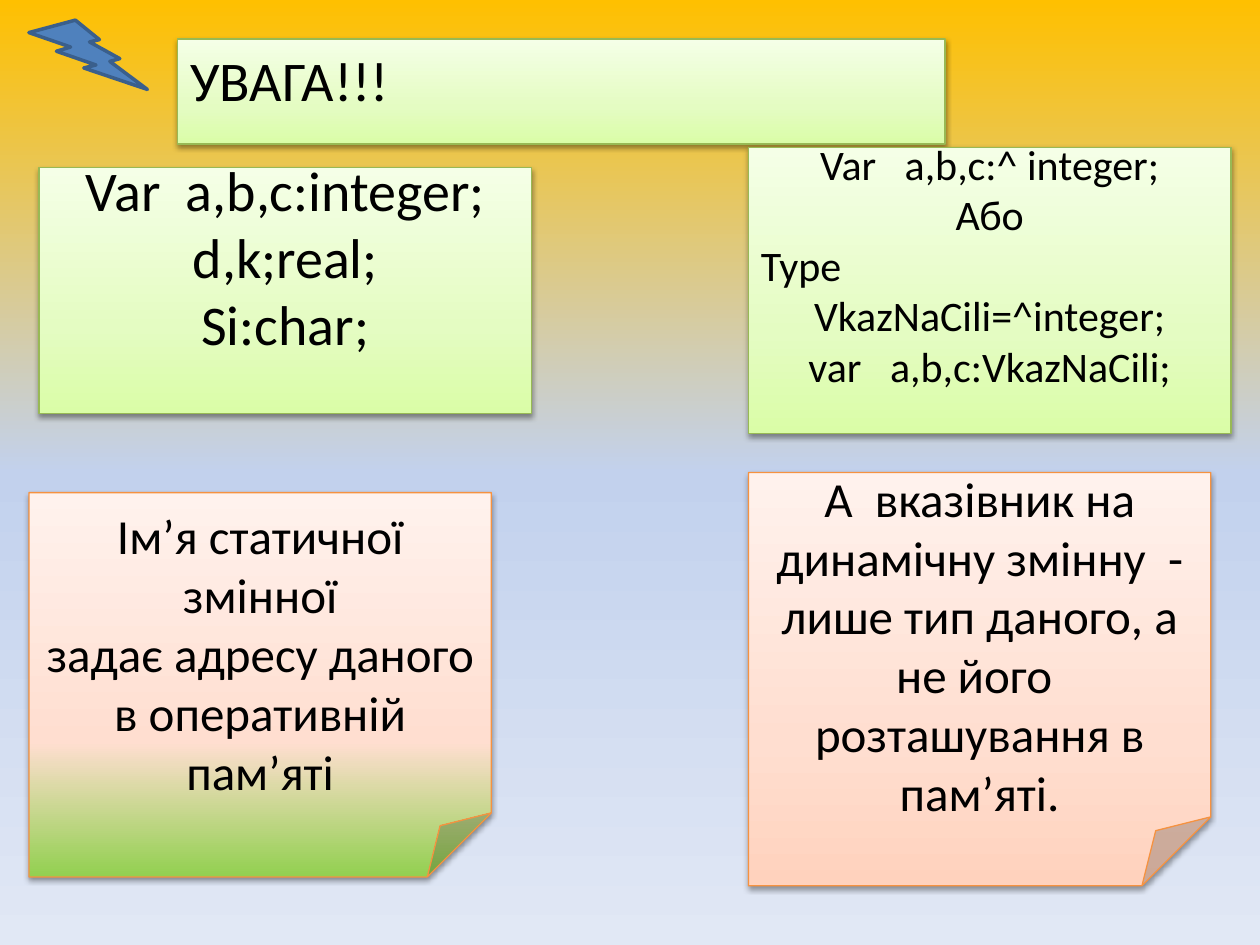
from pptx import Presentation, util as u
from pptx.dml.color import RGBColor
from pptx.enum import shapes, text
from pptx.oxml import parse_xml
from pptx.oxml.ns import nsdecls, qn

THEME = {
    "font": "Calibri", "ink": "000000",
    "title": 32, "large": 32, "note": 28, "code": 24,
    "sky": [(0, "FFC000"), (50, "C2D1ED"), (100, "E1E8F5")],
    "green": ([(0, "DAFDA7"), (35, "E4FCC2"), (100, "F5FFE7")], "98B955"),
    "peach": ([(0, "FFD2BD"), (35, "FFDED0"), (100, "FFF2ED")], "F69240"),
    "meadow": ([(0, "92D050"), (35, "FFDED0"), (100, "FFF2ED")], "F69240"),
    "bolt": ("4F81BD", "3A5F8C"),
}
DOWN, UP = 270, 90
RECT, NOTE = shapes.MSO_SHAPE.RECTANGLE, shapes.MSO_SHAPE.FOLDED_CORNER
LEFT, CENTER = text.PP_ALIGN.LEFT, text.PP_ALIGN.CENTER

TITLE = ("УВАГА!!!", (1.41, 0.31, 6.09, 0.64))
BOLT = (0.23, 0.16, 0.94, 0.55)
PANELS = [
    {"shape": RECT, "at": (0.31, 1.33, 3.91, 1.95), "look": "green", "size": "large", "bottom": 0.59,
     "lines": [("Var  a,b,c:integer;\nd,k;real;", CENTER), ("Si:char;", CENTER)]},
    {"shape": RECT, "at": (5.94, 1.17, 3.83, 2.27), "look": "green", "size": "code", "bottom": 0.46,
     "lines": [("Var   a,b,c:^ integer;", CENTER), ("Або", CENTER), ("Type", LEFT),
               ("VkazNaCili=^integer;\nvar   a,b,c:VkazNaCili;", CENTER)]},
    {"shape": NOTE, "at": (0.23, 3.91, 3.67, 3.05), "look": "meadow", "size": "note", "bottom": 0.05,
     "lines": [("Ім’я статичної змінної\nзадає адресу даного в оперативній пам’яті", CENTER)]},
    {"shape": NOTE, "at": (5.94, 3.75, 3.67, 3.28), "look": "peach", "size": "note", "bottom": 0.05,
     "lines": [("А  вказівник на динамічну змінну  - лише тип даного, а не його  "
                "розташування в пам’яті.", CENTER)]},
]


def rgb(value):
    return RGBColor.from_string(value)


def set_gradient(fill, element, stops, angle):
    fill.gradient()
    fill.gradient_angle = angle
    gs_list = element.find(".//" + qn("a:gsLst"))
    for gs in list(gs_list):
        gs_list.remove(gs)
    for pos, color in stops:
        gs_list.append(parse_xml(
            f'<a:gs {nsdecls("a")} pos="{pos * 1000}"><a:srgbClr val="{color}"/></a:gs>'))


def set_look(sp, look):
    stops, line = THEME[look]
    set_gradient(sp.fill, sp._element, stops, UP)
    sp.line.color.rgb = rgb(line)
    sp.line.width = u.Pt(0.75)
    sp.shadow.inherit = False
    sp._element.spPr.find(qn("a:effectLst")).append(parse_xml(
        f'<a:outerShdw {nsdecls("a")} blurRad="40000" dist="20000" dir="5400000" rotWithShape="0">'
        '<a:srgbClr val="000000"><a:alpha val="38000"/></a:srgbClr></a:outerShdw>'))


def write(tf, lines, size):
    for i, (content, align) in enumerate(lines):
        p = tf.paragraphs[0] if i == 0 else tf.add_paragraph()
        p.alignment = align
        for j, part in enumerate(content.split("\n")):
            if j:
                p.add_line_break()
            r = p.add_run()
            r.text = part
            r.font.name = THEME["font"]
            r.font.size = u.Pt(THEME[size])
            r.font.color.rgb = rgb(THEME["ink"])


def main():
    prs = Presentation()
    prs.slide_width, prs.slide_height = u.Inches(10), u.Inches(7.5)
    s = prs.slides.add_slide(prs.slide_layouts[5])
    set_gradient(s.background.fill, s._element, THEME["sky"], DOWN)

    title = s.shapes.title
    content, at = TITLE
    title.left, title.top, title.width, title.height = map(u.Inches, at)
    set_look(title, "green")
    tf = title.text_frame
    tf.word_wrap = True
    tf.auto_size = text.MSO_AUTO_SIZE.SHAPE_TO_FIT_TEXT
    tf.vertical_anchor = text.MSO_ANCHOR.TOP
    write(tf, [(content, LEFT)], "title")

    bolt = s.shapes.add_shape(shapes.MSO_SHAPE.LIGHTNING_BOLT, *map(u.Inches, BOLT))
    fill, line = THEME["bolt"]
    bolt.fill.solid()
    bolt.fill.fore_color.rgb = rgb(fill)
    bolt.line.color.rgb = rgb(line)
    bolt.line.width = u.Pt(2)
    bolt.shadow.inherit = False

    for panel in PANELS:
        sp = s.shapes.add_shape(panel["shape"], *map(u.Inches, panel["at"]))
        set_look(sp, panel["look"])
        tf = sp.text_frame
        tf.word_wrap = True
        tf.vertical_anchor = text.MSO_ANCHOR.MIDDLE
        tf.margin_bottom = u.Inches(panel["bottom"])
        write(tf, panel["lines"], panel["size"])

    prs.save("out.pptx")


if __name__ == "__main__":
    main()
